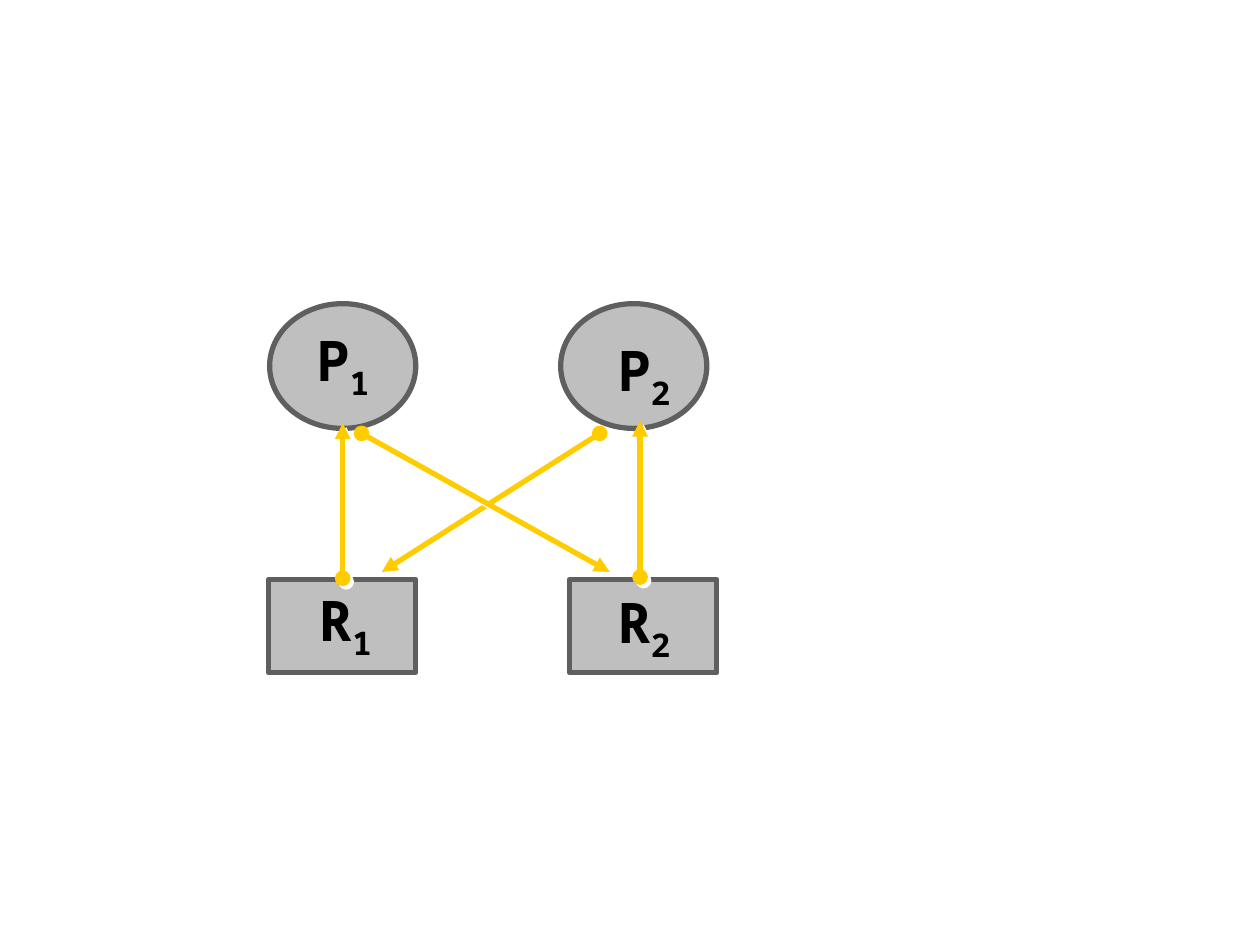
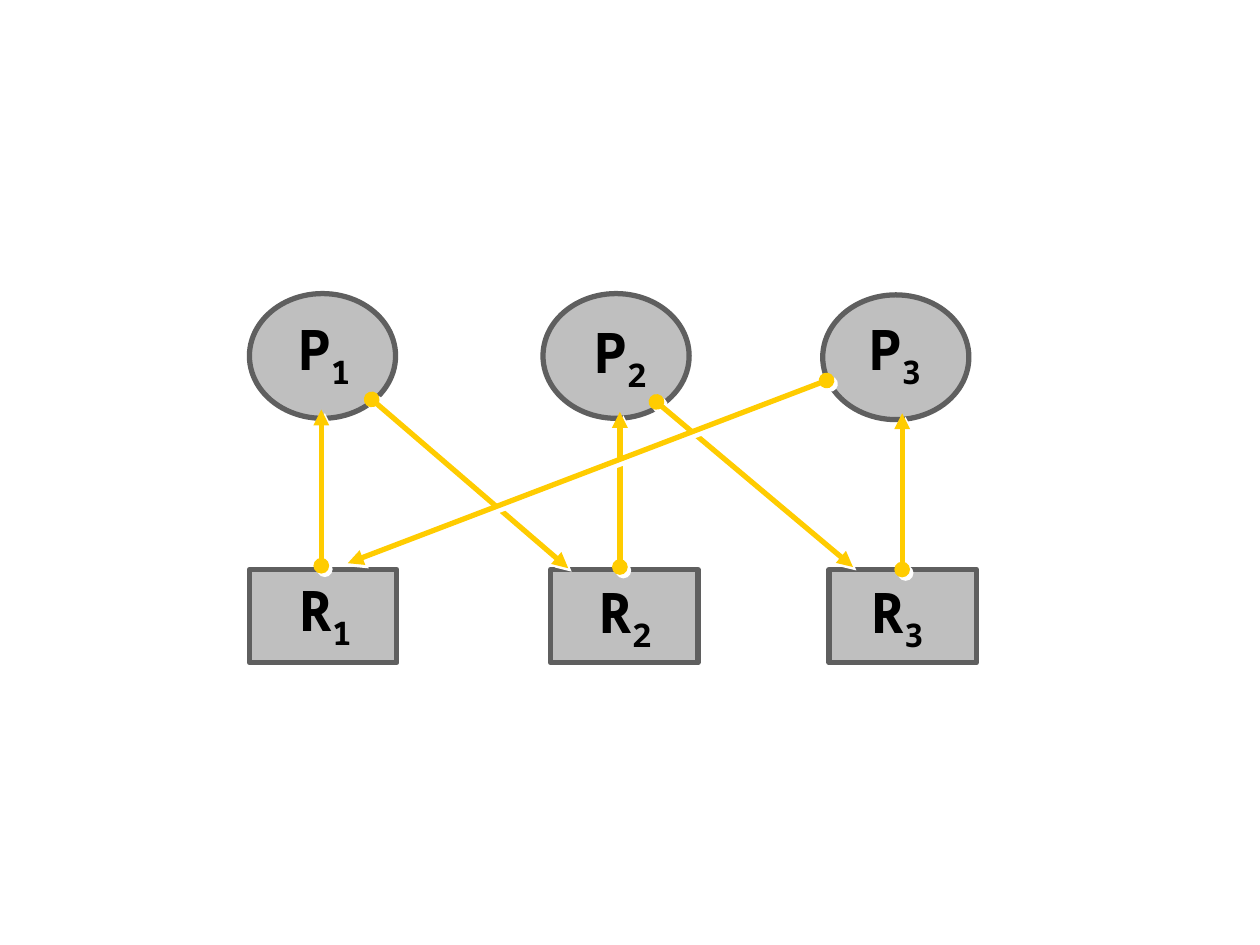
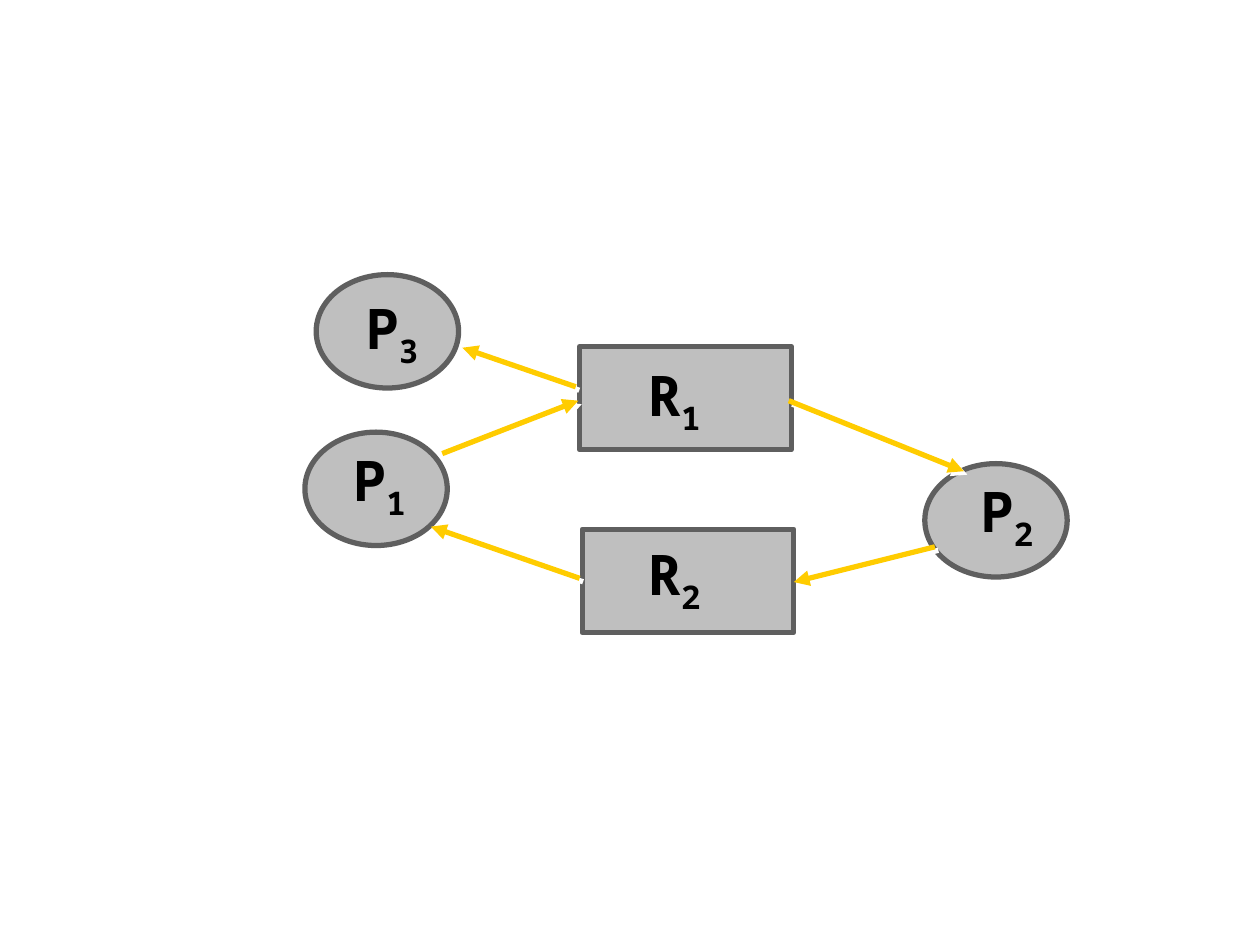
"""Three resource graphs: processes as ellipses, resources as boxes, arrows between them."""
from lxml import etree
from pptx import Presentation, util as u
from pptx.dml.color import RGBColor
from pptx.enum import shapes, text
from pptx.oxml.ns import qn

FONT = "Noto Sans Mono"
COL = {"node": "808080", "edge": "5F5F5F", "arrow": "FFCC00", "ink": "000000", "glow": "FFFFFF"}
KIND = {"P": shapes.MSO_SHAPE.OVAL, "R": shapes.MSO_SHAPE.RECTANGLE}

# node: label, left, top of shape, left, top of label; line: from x, y, to x, y
PAIR = {"P": (1.16, 0.99), "R": (1.17, 0.74)}
WIDE = {"P": (1.13, 0.9), "R": (1.68, 0.82)}
GRAPHS = [
    {"size": PAIR, "width": {"P": 1.16, "R": 1.46}, "inset": {}, "start": "oval",
     "nodes": [("R2", 4.52, 4.6, 4.38, 4.65), ("P1", 2.14, 2.41, 2.14, 2.57),
               ("P2", 4.45, 2.41, 4.53, 2.65), ("R1", 2.13, 4.6, 2.01, 4.64)],
     "lines": [(5.08, 4.58, 5.08, 3.34), (4.76, 3.44, 3.03, 4.54),
               (2.72, 4.59, 2.72, 3.36), (2.87, 3.44, 4.84, 4.54)]},
    {"size": PAIR, "width": {"P": 1.16, "R": 1.46}, "inset": {}, "start": "oval",
     "nodes": [("R2", 4.37, 4.52, 4.23, 4.57), ("R3", 6.58, 4.52, 6.39, 4.57),
               ("P1", 1.98, 2.33, 1.99, 2.49), ("P2", 4.31, 2.33, 4.34, 2.51),
               ("P3", 6.53, 2.34, 6.52, 2.49), ("R1", 1.98, 4.52, 1.85, 4.56)],
     "lines": [(4.92, 4.5, 4.92, 3.27), (7.16, 4.52, 7.16, 3.28),
               (2.95, 3.17, 4.51, 4.51), (5.21, 3.19, 6.77, 4.5),
               (6.56, 3.02, 2.76, 4.47), (2.55, 4.49, 2.55, 3.25)]},
    {"size": WIDE, "width": {"P": 0.7, "R": 1.05}, "inset": {"R": 0.27}, "start": None,
     "nodes": [("P3", 2.51, 2.18, 2.76, 2.32), ("P1", 2.42, 3.43, 2.66, 3.53),
               ("P2", 7.34, 3.68, 7.64, 3.77), ("R1", 4.6, 2.75, 4.96, 2.85),
               ("R2", 4.62, 4.2, 4.96, 4.27)],
     "lines": [(4.57, 3.07, 3.67, 2.76), (6.26, 3.18, 7.65, 3.74),
               (7.42, 4.34, 6.3, 4.62), (4.6, 4.59, 3.42, 4.18),
               (3.51, 3.6, 4.59, 3.18)]},
]


def rgb(name):
    return RGBColor.from_string(COL[name])


def inch(*vals):
    return [u.Inches(v) for v in vals]


def sub(base, tag, **attrs):
    return etree.SubElement(base, qn(tag), attrs)


def add_node(slide, kind, *box):
    node = slide.shapes.add_shape(KIND[kind], *inch(*box))
    node.shadow.inherit = False
    node.fill.solid()
    node.fill.fore_color.rgb = rgb("node")
    tint = node.fill._xPr.find(".//" + qn("a:srgbClr"))
    sub(tint, "a:alpha", val="50000")
    node.line.color.rgb = rgb("edge")
    node.line.width = u.Pt(3)


def add_label(slide, name, left, top, width, inset):
    frame = slide.shapes.add_textbox(*inch(left, top, width, 0.5)).text_frame
    frame.word_wrap = True
    frame.vertical_anchor = text.MSO_ANCHOR.TOP
    frame.margin_left = frame.margin_bottom = 0
    frame.margin_top, frame.margin_right = inch(0.01, inset)
    para = frame.paragraphs[0]
    para.alignment = text.PP_ALIGN.CENTER
    for part in name:
        run = para.add_run()
        run.text = part
        run.font.name, run.font.size, run.font.bold = FONT, u.Pt(32), True
        run.font.color.rgb = rgb("ink")
        if part.isdigit():
            run.font._element.set("baseline", "-25000")


def add_arrow(slide, ends, start):
    line = slide.shapes.add_connector(shapes.MSO_CONNECTOR.STRAIGHT, *inch(*ends))
    line.line.color.rgb = rgb("arrow")
    line.line.width = u.Pt(3)
    stroke = line.line._get_or_add_ln()
    if start:
        sub(stroke, "a:headEnd", type=start)
    sub(stroke, "a:tailEnd", type="triangle")
    fx = sub(line._element.spPr, "a:effectLst")
    glow = sub(fx, "a:outerShdw", dist=str(u.Pt(2.8)), dir="2700000", algn="ctr", rotWithShape="0")
    sub(glow, "a:srgbClr", val=COL["glow"])


def main():
    deck = Presentation()
    deck.slide_width, deck.slide_height = inch(10, 7.5)
    for graph in GRAPHS:
        slide = deck.slides.add_slide(deck.slide_layouts[6])
        for name, left, top, tx, ty in graph["nodes"]:
            kind = name[0]
            add_node(slide, kind, left, top, *graph["size"][kind])
            add_label(slide, name, tx, ty, graph["width"][kind], graph["inset"].get(kind, 0))
        for ends in graph["lines"]:
            add_arrow(slide, ends, graph["start"])
    deck.save("out.pptx")


if __name__ == "__main__":
    main()
